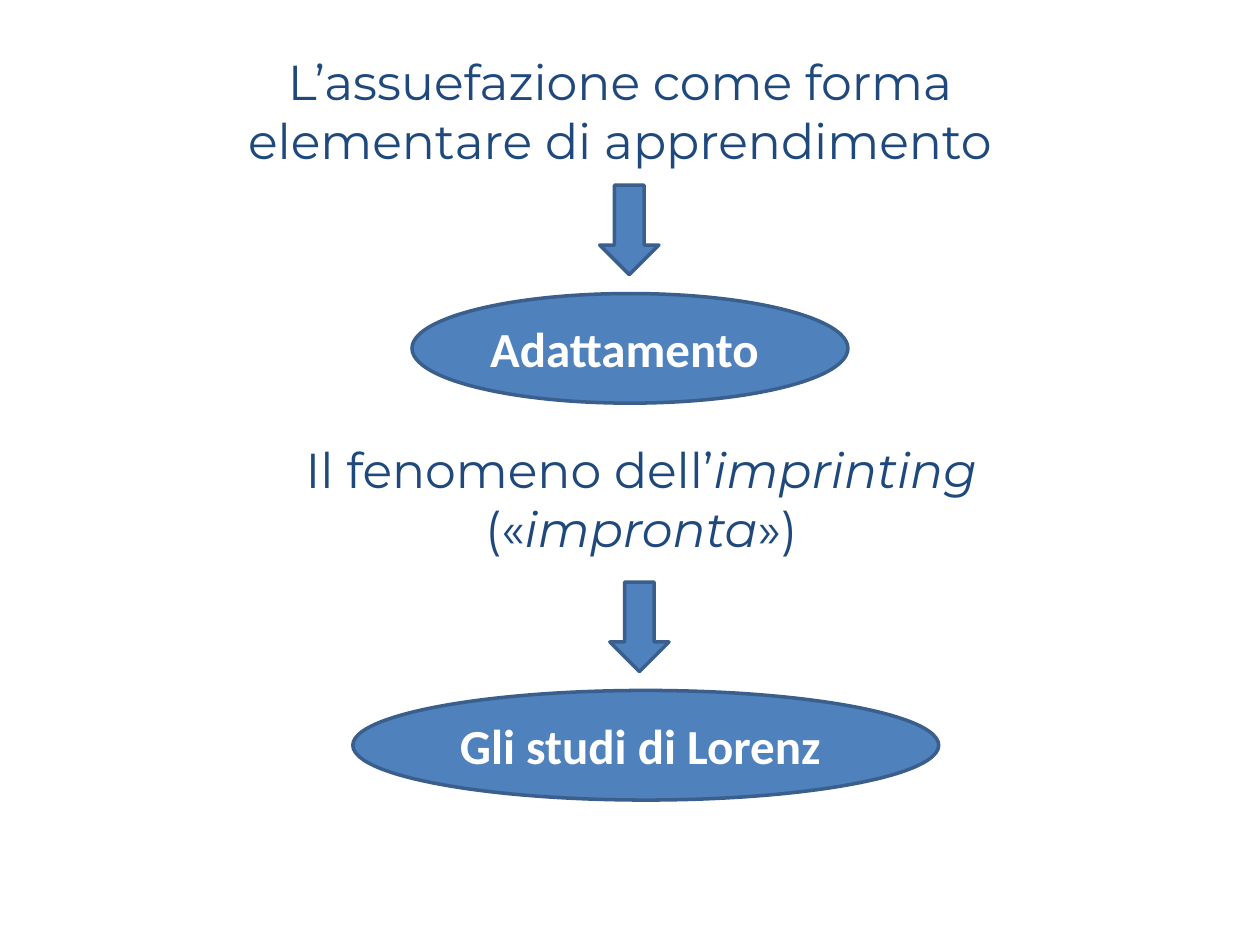
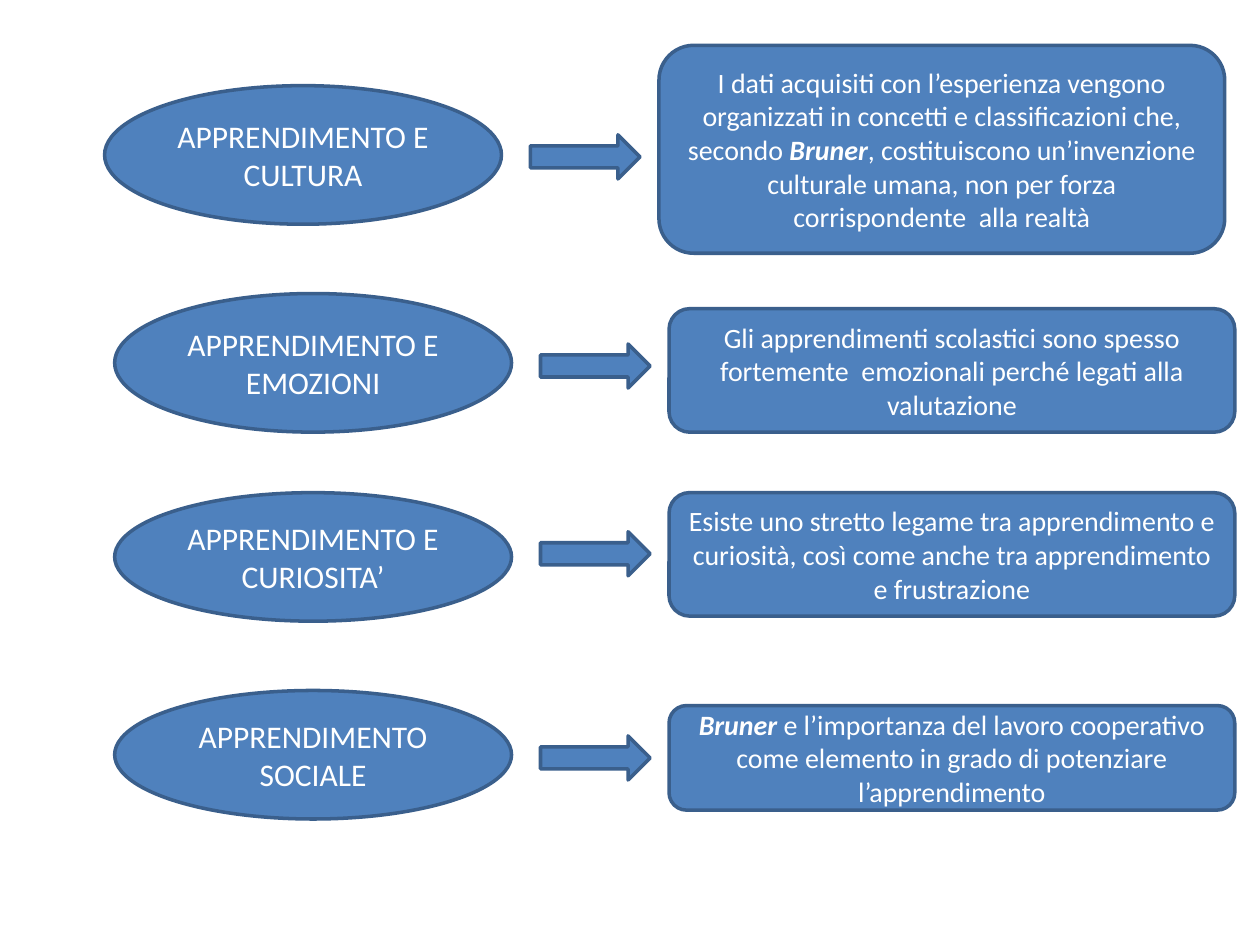
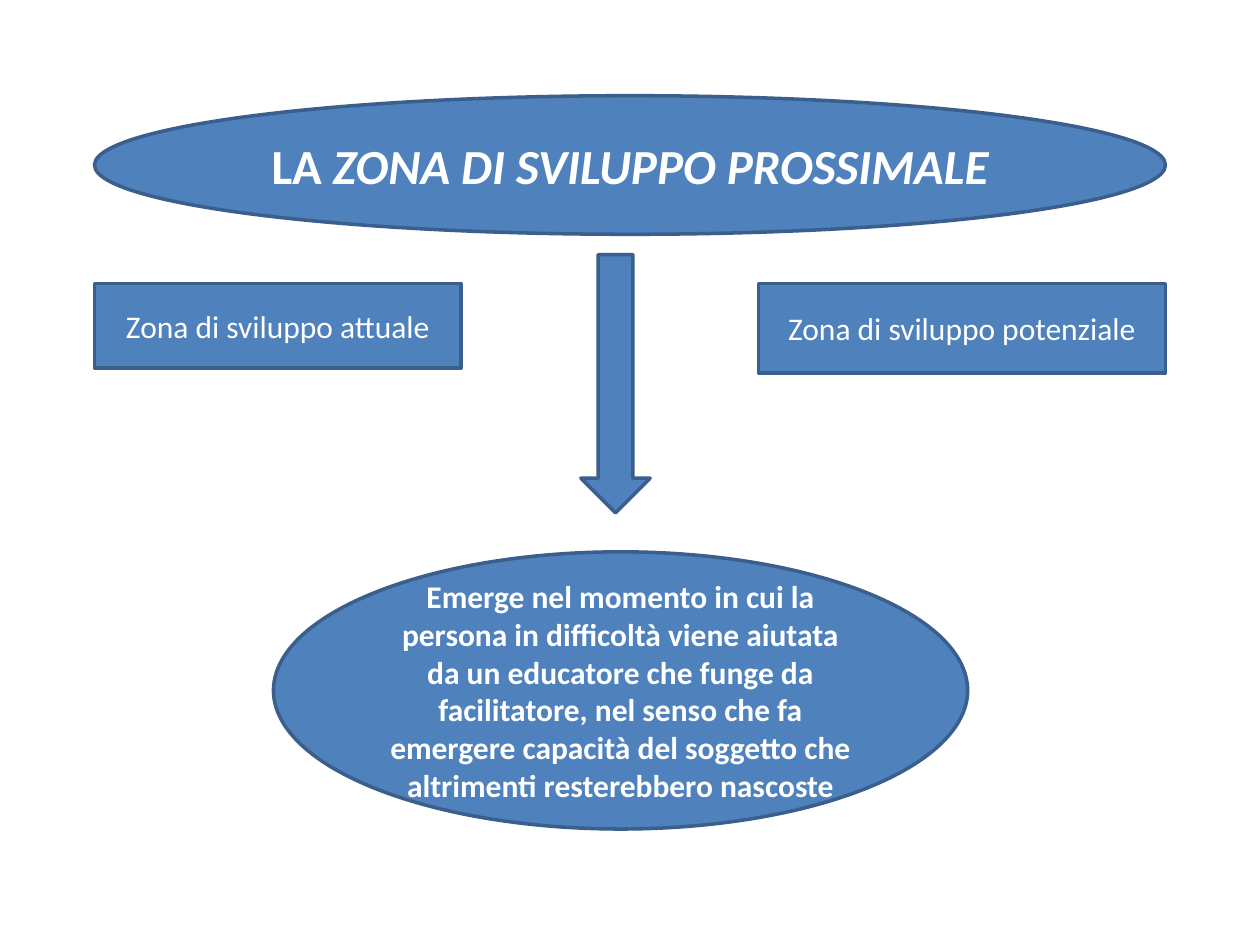
"""Build three slides on forms of learning and the zone of proximal development."""
from pptx import Presentation
from pptx.dml.color import RGBColor
from pptx.enum.shapes import MSO_SHAPE
from pptx.enum.text import MSO_ANCHOR, MSO_AUTO_SIZE, PP_ALIGN
from pptx.util import Inches, Pt

ELLIPSE = MSO_SHAPE.OVAL
RECTANGLE = MSO_SHAPE.RECTANGLE
ROUNDED = MSO_SHAPE.ROUNDED_RECTANGLE
DOWN = MSO_SHAPE.DOWN_ARROW
RIGHT = MSO_SHAPE.RIGHT_ARROW
TOP, MIDDLE = MSO_ANCHOR.TOP, MSO_ANCHOR.MIDDLE
CENTER = PP_ALIGN.CENTER
NO_FIT = MSO_AUTO_SIZE.NONE

COLORS = {"fill": "4F81BD", "outline": "3A5F8C", "heading": "1F497D", "light": "FFFFFF"}
HEADING = {"size": 28, "font": "Montserrat", "color": "heading", "anchor": TOP}
TITLE_ONLY, BLANK = 5, 6


def write(box, text, size=18, font="Calibri", color="light", anchor=MIDDLE,
          bold=False, strong=False):
    """Write centred text; parts between asterisks are italic, and bold if strong."""
    frame = box.text_frame
    frame.word_wrap = True
    frame.auto_size = NO_FIT
    frame.vertical_anchor = anchor
    para = frame.paragraphs[0]
    para.alignment = CENTER
    for index, part in enumerate(text.split("*")):
        if part:
            emphasis = index % 2 == 1
            span = para.add_run()
            span.text = part
            span.font.name = font
            span.font.size = Pt(size)
            span.font.color.rgb = RGBColor.from_string(COLORS[color])
            span.font.italic = emphasis
            span.font.bold = bold or (strong and emphasis)


def draw(page, kind, left, top, width, height):
    """Add a filled, outlined shape measured in inches."""
    shape = page.shapes.add_shape(kind, *map(Inches, (left, top, width, height)))
    shape.shadow.inherit = False
    shape.fill.solid()
    shape.fill.fore_color.rgb = RGBColor.from_string(COLORS["fill"])
    shape.line.color.rgb = RGBColor.from_string(COLORS["outline"])
    shape.line.width = Pt(2)
    return shape


deck = Presentation()
deck.slide_width, deck.slide_height = Inches(10), Inches(7.5)

page = deck.slides.add_slide(deck.slide_layouts[TITLE_ONLY])
title = page.shapes.title
title.left, title.top, title.width, title.height = map(Inches, (1.22, 0.36, 7.4, 1.04))
write(title, "L’assuefazione come forma elementare di apprendimento", **HEADING)
subtitle = page.shapes.add_textbox(*map(Inches, (1.39, 3.44, 7.4, 1.04)))
write(subtitle, "Il fenomeno dell’*imprinting* («*impronta*»)", **HEADING)

STEP = 3.15
conclusions = [
    ("Adattamento ", 4.76, 3.27, 3.46),
    ("Gli studi di Lorenz ", 4.84, 2.8, 4.65),
]
for row, (text, arrow_left, left, width) in enumerate(conclusions):
    draw(page, DOWN, arrow_left, 1.47 + row * STEP, 0.47, 0.71)
    conclusion = draw(page, ELLIPSE, left, 2.33 + row * STEP, width, 0.87)
    write(conclusion, text, size=28, bold=True)

page = deck.slides.add_slide(deck.slide_layouts[BLANK])
ARROW_OFFSET, DETAIL_OFFSET = 3.38, 4.4
topics = [
    ("APPRENDIMENTO E CULTURA", 0.83, 0.68, 1.1, 1.07, 0.36, 1.65,
     "I dati acquisiti con l’esperienza vengono organizzati in concetti e classificazioni "
     "che, secondo *Bruner*, costituiscono un’invenzione culturale umana, non per forza "
     "corrispondente  alla realtà"),
    ("APPRENDIMENTO E EMOZIONI", 0.91, 2.33, 1.1, 2.73, 2.45, 0.98,
     "Gli apprendimenti scolastici sono spesso fortemente  emozionali perché legati alla "
     "valutazione"),
    ("APPRENDIMENTO E CURIOSITA’", 0.91, 3.91, 1.02, 4.22, 3.91, 0.98,
     "Esiste uno stretto legame tra apprendimento e curiosità, così come anche tra "
     "apprendimento e frustrazione"),
    ("APPRENDIMENTO SOCIALE", 0.91, 5.48, 1.02, 5.84, 5.6, 0.83,
     "*Bruner* e l’importanza del lavoro cooperativo come elemento in grado di potenziare "
     "l’apprendimento"),
]
for name, left, top, height, arrow_top, detail_top, detail_height, detail in topics:
    write(draw(page, ELLIPSE, left, top, 3.15, height), name)
    draw(page, RIGHT, left + ARROW_OFFSET, arrow_top, 0.87, 0.35)
    detail_box = draw(page, ROUNDED, left + DETAIL_OFFSET, detail_top, 4.49, detail_height)
    write(detail_box, detail, size=16, strong=True)

page = deck.slides.add_slide(deck.slide_layouts[BLANK])
MARGIN = 0.75
zone = draw(page, ELLIPSE, MARGIN, 0.76, 10 - 2 * MARGIN, 1.1)
write(zone, "LA *ZONA DI SVILUPPO PROSSIMALE*", size=28, bold=True)
current = draw(page, RECTANGLE, MARGIN, 2.25, 2.91, 0.67)
write(current, "Zona di sviluppo attuale")
potential = draw(page, RECTANGLE, 10 - MARGIN - 3.23, 2.25, 3.23, 0.71)
write(potential, "Zona di sviluppo potenziale")
draw(page, DOWN, 4.61, 2.02, 0.55, 2.05)
explanation = draw(page, ELLIPSE, 2.17, 4.38, 5.51, 2.2)
write(explanation,
      "Emerge nel momento in cui la persona in difficoltà viene aiutata da un educatore "
      "che funge da facilitatore, nel senso che fa emergere capacità del soggetto che "
      "altrimenti resterebbero nascoste", bold=True)

deck.save("out.pptx")
